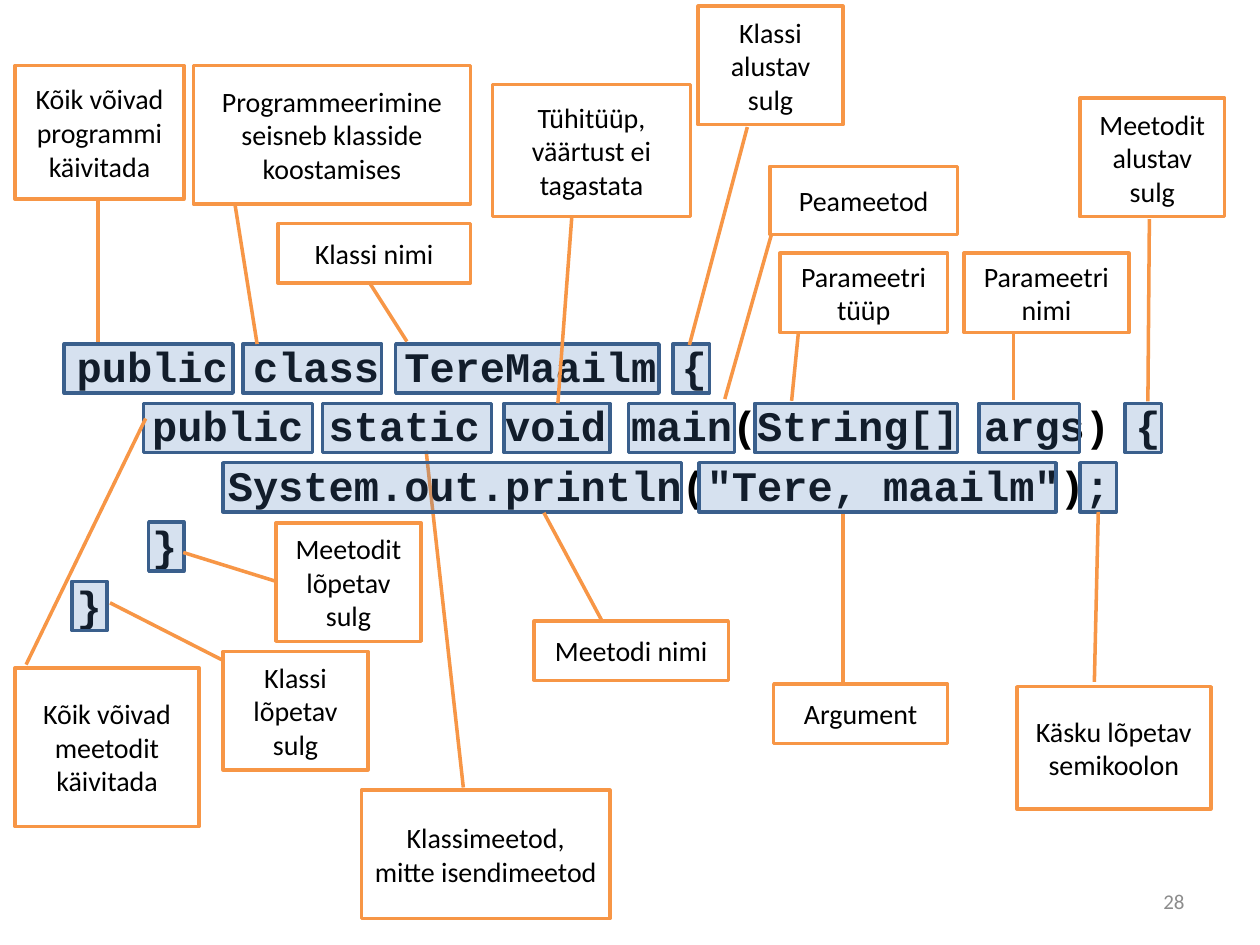
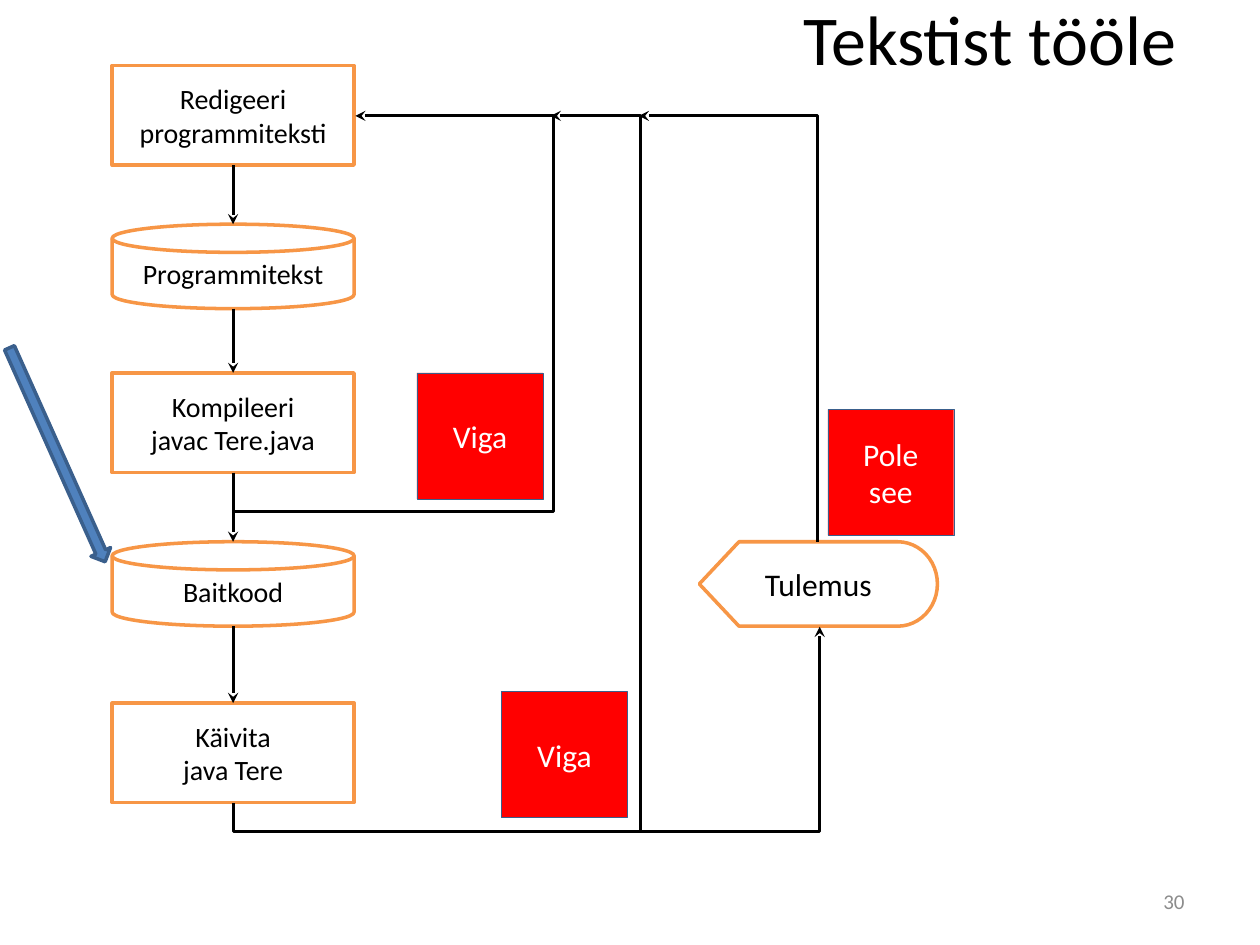
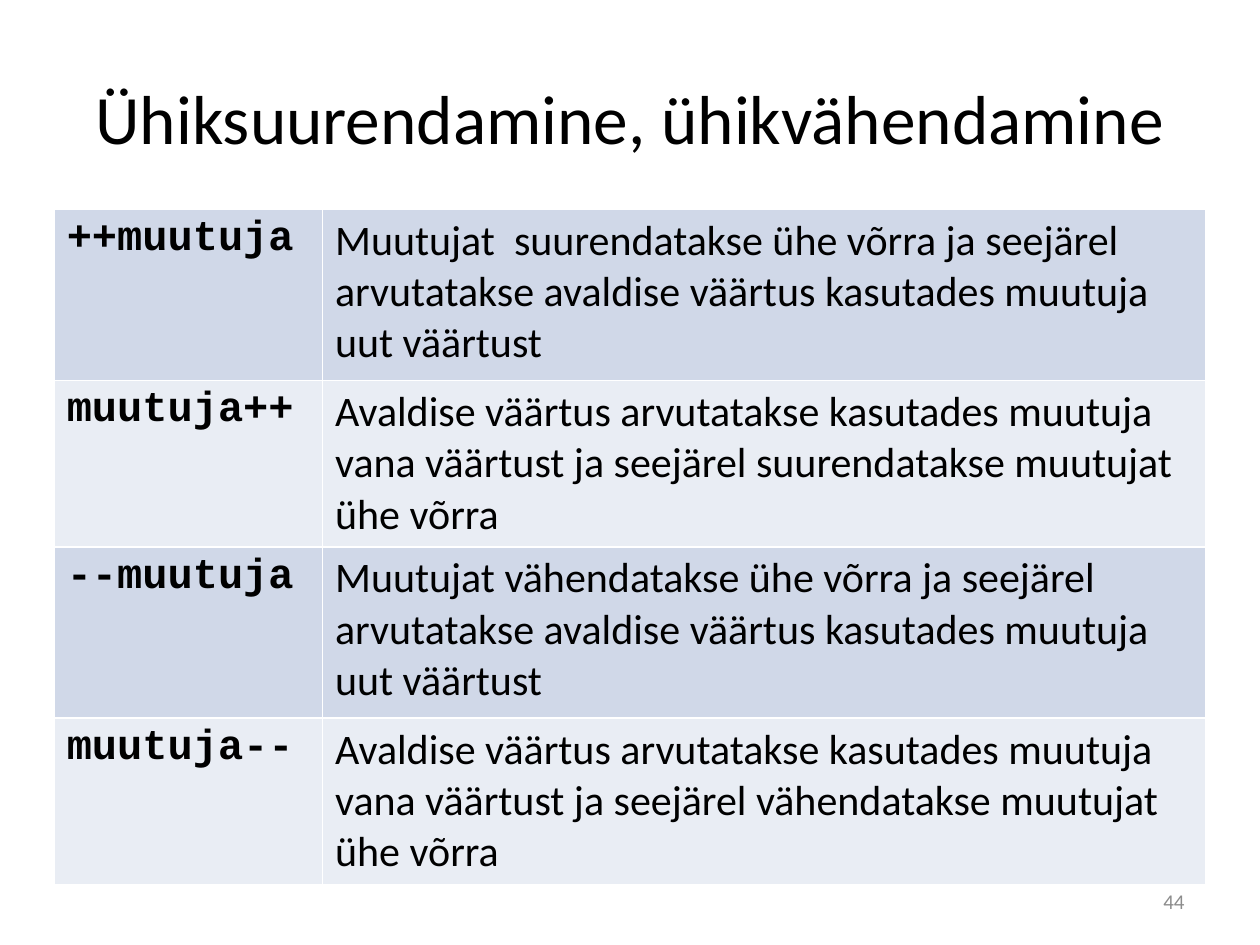
from collections import namedtuple
from itertools import pairwise

from lxml.etree import SubElement
from pptx import Presentation
from pptx.dml.color import RGBColor
from pptx.enum.shapes import MSO_CONNECTOR as Connector, MSO_SHAPE as Shape
from pptx.enum.text import MSO_ANCHOR as Anchor, MSO_AUTO_SIZE as AutoSize, PP_ALIGN as Align
from pptx.oxml import parse_xml
from pptx.oxml.ns import nsdecls, qn
from pptx.util import Inches, Pt

BLACK = RGBColor(0x00, 0x00, 0x00)
WHITE = RGBColor(0xFF, 0xFF, 0xFF)
ORANGE = RGBColor(0xF7, 0x96, 0x46)
BLUE = RGBColor(0x4F, 0x81, 0xBD)
DARK_BLUE = RGBColor(0x3A, 0x5F, 0x8C)
RED = RGBColor(0xFF, 0x00, 0x00)
GREY = RGBColor(0x8C, 0x8C, 0x8C)
BAND_DARK = RGBColor(0xD0, 0xD8, 0xE8)
BAND_LIGHT = RGBColor(0xE9, 0xED, 0xF4)

SANS, MONO = "Calibri", "Courier New"
COLUMNS, ROWS = 100, 75
SLIDE_WIDTH, SLIDE_HEIGHT = Inches(10), Inches(7.5)
TITLE_ONLY, BLANK = 5, 6
CHAR_COLUMNS = 2
CODE_PITCH = 4.71

Box = namedtuple("Box", "left top width height")

CODE = [
    (0, "public class TereMaailm {", [(0, 13.4), (14.2, 11), (26.3, 20.9), (48.3, 2.9)]),
    (3, "public static void main(String[] args) {",
     [(6.3, 13.4), (20.5, 13.4), (34.9, 8.4), (44.8, 8.4), (54.8, 16.1), (72.6, 8), (84.2, 2.9)]),
    (6, 'System.out.println("Tere, maailm");', [(12.6, 36.4), (50.4, 28.3), (80.6, 2.9)]),
    (3, "}", [(6.7, 2.8)]),
    (0, "}", [(0.6, 2.8)]),
]

BACK_CALLOUT = ("Klassimeetod, mitte isendimeetod", Box(28.7, 62.7, 19.7, 10.2), (-2.64, 0.26, -0.02, 0.41))
CALLOUTS = [
    ("Kõik võivad programmi käivitada", Box(1.2, 5.2, 13.4, 10.6), (1.01, 0.49, 2.07, 0.49)),
    ("Programmeerimine seisneb klasside koostamises", Box(15.35, 5.2, 22, 11), (1, 0.15, 2.01, 0.23)),
    ("Klassi nimi", Box(22.05, 17.75, 15.3, 4.7), (1.02, 0.48, 1.99, 0.67)),
    ("Klassi alustav sulg", Box(55.4, 0.5, 11.5, 9.4), (1.02, 0.34, 2.86, -0.06)),
    ("Kõik võivad meetodit käivitada", Box(1.2, 53, 14.6, 12.6), (-1.57, 0.71, -0.02, 0.06)),
    ("Tühitüüp, väärtust ei tagastata", Box(39.1, 6.7, 15.7, 10.5), (1.01, 0.4, 2.41, 0.33)),
    ("Peameetod", Box(61.1, 13.2, 14.9, 5.4), (0.99, 0.01, 3.42, -0.24)),
    ("Meetodit alustav sulg", Box(85.7, 7.8, 11.5, 9.4), (1.02, 0.48, 2.56, 0.47)),
    ("Parameetri tüüp", Box(61.9, 20.1, 13.3, 6.3), (1.01, 0.11, 1.86, 0.07)),
    ("Parameetri nimi", Box(76.5, 20.1, 13.1, 6.3), (1.01, 0.3, 1.85, 0.3)),
    ("Meetodit lõpetav sulg", Box(21.9, 41.5, 11.5, 9.4), (0.49, -0.01, 0.25, -0.64)),
    ("Klassi lõpetav sulg", Box(17.7, 51.7, 11.5, 9.4), (0.07, -0.01, -0.41, -0.78)),
    ("Meetodi nimi", Box(42.4, 49.3, 15.4, 4.7), (0, 0.35, -1.83, 0.05)),
    ("Argument", Box(61.4, 54.3, 13.8, 4.7), (-0.04, 0.4, -2.87, 0.4)),
    ("Käsku lõpetav semikoolon", Box(80.7, 54.5, 15.4, 9.7), (-0.04, 0.4, -1.43, 0.42)),
]

STEPS = [
    (Shape.RECTANGLE, 0, 7.9, ["Redigeeri programmiteksti"]),
    (Shape.FLOWCHART_MAGNETIC_DISK, 12.6, 6.7, ["Programmitekst"]),
    (Shape.RECTANGLE, 24.4, 7.9, ["Kompileeri", "javac Tere.java"]),
    (Shape.FLOWCHART_MAGNETIC_DISK, 37.8, 6.7, ["Baitkood"]),
    (Shape.RECTANGLE, 50.6, 7.9, ["Käivita", "java Tere"]),
]

OPERATORS = [
    ("++muutuja", "Muutujat  suurendatakse ühe võrra ja seejärel arvutatakse avaldise väärtus "
                  "kasutades muutuja uut väärtust"),
    ("muutuja++", "Avaldise väärtus arvutatakse kasutades muutuja vana väärtust ja seejärel "
                  "suurendatakse muutujat ühe võrra"),
    ("--muutuja", "Muutujat vähendatakse ühe võrra ja seejärel arvutatakse avaldise väärtus "
                  "kasutades muutuja uut väärtust"),
    ("muutuja--", "Avaldise väärtus arvutatakse kasutades muutuja vana väärtust ja seejärel "
                  "vähendatakse muutujat ühe võrra"),
]


def across(columns):
    """Turn grid columns into a slide length."""
    return round(SLIDE_WIDTH * columns / COLUMNS)


def down(rows):
    """Turn grid rows into a slide length."""
    return round(SLIDE_HEIGHT * rows / ROWS)


def lengths(box):
    """Turn a grid box into left, top, width and height."""
    return across(box.left), down(box.top), across(box.width), down(box.height)


def write(frame, lines, size, color=BLACK, font=SANS, bold=False, align=Align.CENTER, anchor=Anchor.MIDDLE):
    """Fill a text frame with one formatted paragraph per line."""
    frame.word_wrap = True
    frame.vertical_anchor = anchor
    for number, line in enumerate(lines):
        para = frame.add_paragraph() if number else frame.paragraphs[0]
        para.alignment = align
        span = para.add_run()
        span.text = line
        span.font.name, span.font.size, span.font.bold = font, Pt(size), bold
        span.font.color.rgb = color


def add_box(page, kind, box, fill=WHITE, line=ORANGE, weight=2):
    """Add a flat preset shape with a fill and an outline."""
    shape = page.shapes.add_shape(kind, *lengths(box))
    shape.shadow.inherit = False
    shape.fill.solid()
    shape.fill.fore_color.rgb = fill
    shape.line.color.rgb = line
    shape.line.width = Pt(weight)
    return shape


def add_title(page, text, box, size):
    """Move and format the title placeholder."""
    title = page.shapes.title
    title.left, title.top, title.width, title.height = lengths(box)
    title.text_frame.auto_size = AutoSize.NONE
    write(title.text_frame, [text], size)


def add_page_number(page, number):
    """Write the grey page number at the lower right."""
    label = page.shapes.add_textbox(*lengths(Box(71.7, 69.5, 23.3, 4)))
    write(label.text_frame, [str(number)], 12, GREY, align=Align.RIGHT)


def add_arrow(page, kind, box):
    """Add a black arrow from the upper left to the lower right of a box."""
    left, top, width, height = lengths(box)
    arrow = page.shapes.add_connector(kind, left, top, left + width, top + height)
    arrow.line.color.rgb = BLACK
    arrow.line.width = Pt(1.75)
    SubElement(arrow._element.spPr, qn("a:effectLst"))
    SubElement(arrow.line._get_or_add_ln(), qn("a:tailEnd"), type="stealth")
    return arrow


def add_elbow(page, box, degrees, flips, bends):
    """Add a bent arrow, turned and flipped about its box, with bends as shares of it."""
    properties = add_arrow(page, Connector.ELBOW, box)._element.spPr
    frame = properties.find(qn("a:xfrm"))
    frame.set("rot", str(degrees * 60000))
    for flip in flips:
        frame.set(flip, "1")
    outline = properties.find(qn("a:prstGeom"))
    outline.set("prst", f"bentConnector{len(bends) + 2}")
    guides = outline.find(qn("a:avLst"))
    for number, share in enumerate(bends, 1):
        SubElement(guides, qn("a:gd"), name=f"adj{number}", fmla=f"val {round(share * 100000)}")


def add_callout(page, text, box, leader):
    """Add a note whose leader runs between two points given as shares of its box."""
    note = add_box(page, Shape.LINE_CALLOUT_1, box)
    for index, share in enumerate(leader):
        note.adjustments[index] = share
    write(note.text_frame, [text], 16)


def add_code(page, box):
    """Write the program and lay a translucent mark over each of its parts."""
    listing = page.shapes.add_textbox(*lengths(box)).text_frame
    write(listing, [text for _, text, _ in CODE], 24, font=MONO, bold=True, align=Align.LEFT, anchor=Anchor.TOP)
    for row, (para, (indent, _, marks)) in enumerate(zip(listing.paragraphs, CODE)):
        para.space_before = Pt(5.4)
        para._p.get_or_add_pPr().set("marL", str(across(indent * CHAR_COLUMNS)))
        for left, width in marks:
            place = Box(box.left + left, box.top + 0.8 + row * CODE_PITCH, width, 3.9)
            mark = add_box(page, Shape.RECTANGLE, place, BLUE, DARK_BLUE)
            tint = mark._element.spPr.find(qn("a:solidFill"))[0]
            SubElement(tint, qn("a:alpha"), val="23000")


def add_steps(page, box):
    """Stack the build steps down the box with an arrow between neighbours."""
    centre = box.left + box.width / 2
    for kind, top, height, lines in STEPS:
        step = add_box(page, kind, Box(box.left, box.top + top, box.width, height))
        write(step.text_frame, lines, 16)
    for (_, top, height, _), (_, following, _, _) in pairwise(STEPS):
        gap = Box(centre, box.top + top + height, 0, following - top - height)
        add_arrow(page, Connector.STRAIGHT, gap)


def add_feedback(page, box):
    """Draw the result and the paths that lead back to the first step."""
    left, top = box.left, box.top
    shape = add_box(page, Shape.FLOWCHART_DISPLAY, Box(left + 46.6, top + 37.8, 18.9, 6.7))
    write(shape.text_frame, ["Tulemus"], 18)
    both = ("flipH", "flipV")
    add_elbow(page, Box(left - 1.1, top + 14.7, 31.1, 9.7), 90, both, (-0.01, 2.62))
    add_elbow(page, Box(left + 32, top + 13.8, 33.8, 14.2), 270, ("flipV",), (1,))
    add_elbow(page, Box(left + 25.9, top + 28.3, 14, 46.5), 90, both, (-0.16,))
    add_elbow(page, Box(left + 10, top + 28.8, 56.7, 7.1), 270, ("flipV",), (1,))
    for text, column, row in [("Viga", 24.2, 24.4), ("Pole see", 56.8, 27.3), ("Viga", 30.9, 49.7)]:
        warning = add_box(page, Shape.RECTANGLE, Box(left + column, top + row, 10, 10), RED, DARK_BLUE, 0.25)
        write(warning.text_frame, [text], 18, WHITE)


def style_cell(cell, fill):
    """Fill a cell and give it thin white borders."""
    cell.fill.solid()
    cell.fill.fore_color.rgb = fill
    properties = cell._tc.get_or_add_tcPr()
    for index, side in enumerate(("lnL", "lnR", "lnT", "lnB")):
        properties.insert(index, parse_xml(
            f'<a:{side} {nsdecls("a")} w="{Pt(1)}"><a:solidFill>'
            f'<a:srgbClr val="{WHITE}"/></a:solidFill></a:{side}>'))


def add_operators(page, box):
    """Tabulate each operator beside its meaning."""
    table = page.shapes.add_table(len(OPERATORS), 2, *lengths(box)).table
    table.first_row = table.horz_banding = False
    table.columns[0].width = across(21.3)
    table.columns[1].width = across(box.width - 21.3)
    for number, texts in enumerate(OPERATORS):
        table.rows[number].height = down(13.2 if number % 2 else 13.6)
        for cell, text, font in zip(table.rows[number].cells, texts, (MONO, SANS)):
            style_cell(cell, BAND_LIGHT if number % 2 else BAND_DARK)
            write(cell.text_frame, [text], 24, font=font, bold=font == MONO, align=Align.LEFT, anchor=Anchor.TOP)


def build_anatomy(deck):
    """Build the annotated first program."""
    page = deck.slides.add_slide(deck.slide_layouts[BLANK])
    add_callout(page, *BACK_CALLOUT)
    add_code(page, Box(5.1, 26.5, 90, 24.4))
    for callout in CALLOUTS:
        add_callout(page, *callout)
    add_page_number(page, 28)


def build_workflow(deck):
    """Build the flow from program text to result."""
    page = deck.slides.add_slide(deck.slide_layouts[TITLE_ONLY])
    add_title(page, "Tekstist tööle", Box(59.45, -3.3, 38.2, 12.5), 40)
    column = Box(8.9, 5.2, 19.2, 58.5)
    add_steps(page, column)
    add_feedback(page, column)
    add_page_number(page, 30)
    pointer = add_box(page, Shape.DOWN_ARROW, Box(3.7, 26.8, 1.7, 18.6), BLUE, DARK_BLUE)
    pointer.rotation = 335.9


def build_operators(deck):
    """Build the table of increment and decrement operators."""
    page = deck.slides.add_slide(deck.slide_layouts[TITLE_ONLY])
    add_title(page, "Ühiksuurendamine, ühikvähendamine", Box(5, 3, 90, 12.5), 39.6)
    add_page_number(page, 44)
    add_operators(page, Box(4.3, 16.6, 91.4, 53.6))


def main():
    """Build and save the deck."""
    deck = Presentation()
    deck.slide_width, deck.slide_height = SLIDE_WIDTH, SLIDE_HEIGHT
    build_anatomy(deck)
    build_workflow(deck)
    build_operators(deck)
    deck.save("out.pptx")


if __name__ == "__main__":
    main()
